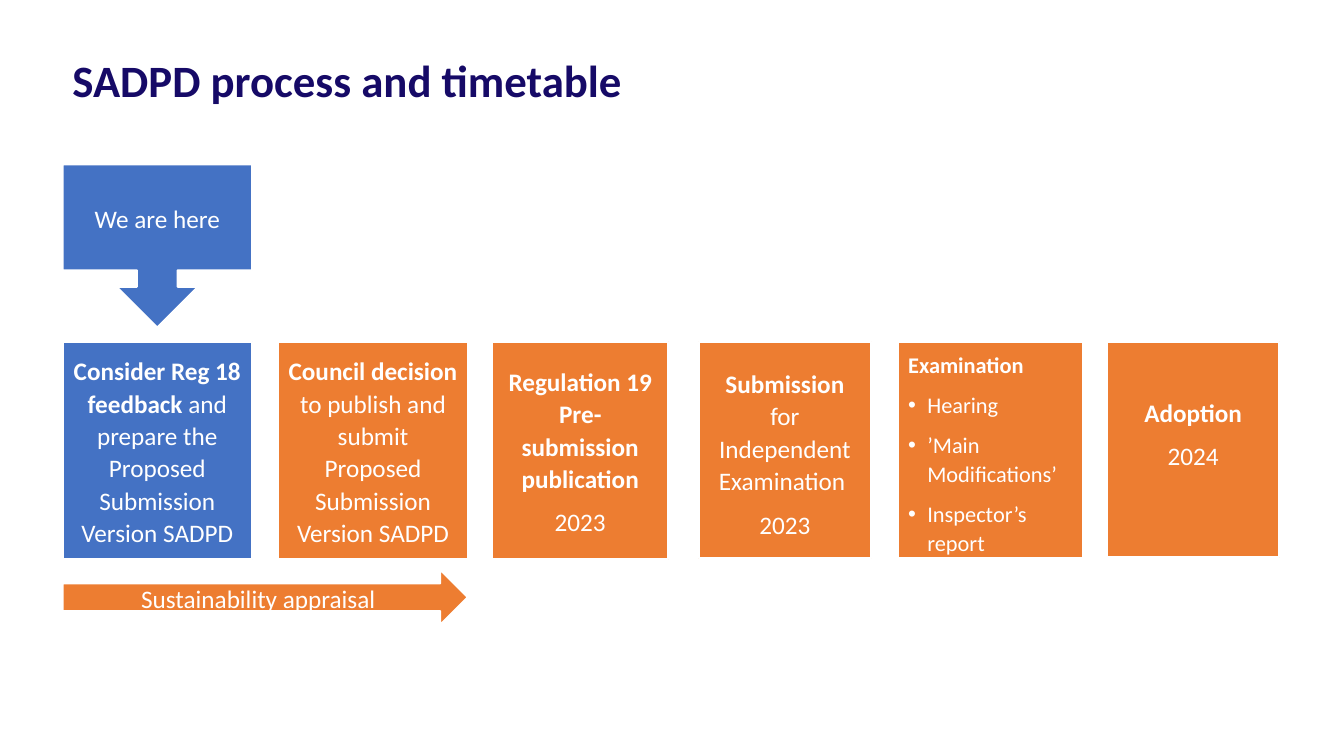
"""Build the SADPD process and timetable slide."""
from pptx import Presentation, util as u
from pptx.dml.color import RGBColor
from pptx.enum import shapes, text
from pptx.oxml import parse_xml
from pptx.oxml.ns import nsdecls

PX = 9144
BLUE = RGBColor(0x44, 0x72, 0xC4)
ORANGE = RGBColor(0xED, 0x7D, 0x31)
WHITE = RGBColor(0xFF, 0xFF, 0xFF)
NAVY = RGBColor(0x16, 0x0A, 0x67)
SHAPE = shapes.MSO_SHAPE
MID, LEFT = text.PP_ALIGN.CENTER, text.PP_ALIGN.LEFT

TITLE = "SADPD process and timetable"
TOP = 339
BULLET = 19

# fields: left, width, height, fill, (top, bottom) inset, size, align, paragraphs of (text, bold)
STEPS = [
    (62, 188, 216, BLUE, (5, 5), 18, MID, [
        [("Consider Reg 18 feedback ", True),
         ("and prepare the Proposed Submission Version SADPD", False)]]),
    (276, 188, 216, ORANGE, (5, 5), 18, MID, [
        [("Council decision ", True),
         ("to publish and submit Proposed Submission Version SADPD", False)]]),
    (488, 175, 216, ORANGE, (5, 5), 18, MID, [
        [("Regulation 19 Pre-submission publication", True)],
        [("2023", False)]]),
    (693, 171, 215, ORANGE, (10, 5), 18, MID, [
        [("Submission", True), (" for Independent Examination ", False)],
        [("2023", False)]]),
    (891, 183, 215, ORANGE, (7, 2), 16, LEFT, [
        [("Examination", True)],
        [("Hearing", False)],
        [("’Main Modifications’", False)],
        [("Inspector’s report", False)]]),
    (1098, 171, 214, ORANGE, (5, 38), 18, MID, [
        [("Adoption", True)],
        [("2024", False)]]),
]
MARKS = [
    (SHAPE.DOWN_ARROW_CALLOUT, (62, 163, 188, 162), BLUE, "We are here"),
    (SHAPE.RIGHT_ARROW, (62, 565, 402, 55), ORANGE, "Sustainability appraisal"),
]


def put(obj, vals):
    for key, val in vals.items():
        setattr(obj, key, val)


def scale(box):
    return [n * PX for n in box]


def write(par, runs, size, color):
    for words, bold in runs:
        run = par.add_run()
        run.text = words
        put(run.font, dict(name="Calibri", size=u.Pt(size), bold=bold))
        run.font.color.rgb = color


def bullet(par):
    props = par._p.get_or_add_pPr()
    props.set("marL", str(BULLET * PX))
    props.set("indent", str(-BULLET * PX))
    props.append(parse_xml(f'<a:buFont {nsdecls("a")} typeface="Arial"/>'))
    props.append(parse_xml(f'<a:buChar {nsdecls("a")} char="•"/>'))


def block(slide, kind, box, fill, inset, size, align, paras):
    shape = slide.shapes.add_shape(kind, *scale(box))
    shape.shadow.inherit = False
    shape.fill.solid()
    shape.fill.fore_color.rgb = fill
    shape.line.color.rgb = WHITE
    shape.line.width = u.Pt(1.5)
    frame = shape.text_frame
    put(frame, dict(word_wrap=True, vertical_anchor=text.MSO_ANCHOR.MIDDLE,
                    margin_top=inset[0] * PX, margin_bottom=inset[1] * PX))
    for i, runs in enumerate(paras):
        par = frame.add_paragraph() if i else frame.paragraphs[0]
        after = 8 if i < len(paras) - 1 else 0
        put(par, dict(alignment=align, line_spacing=1.07, space_after=u.Pt(after)))
        if align == LEFT and i:
            bullet(par)
        write(par, runs, size, WHITE)


def main():
    deck = Presentation()
    put(deck, dict(slide_width=1333 * PX, slide_height=750 * PX))
    slide = deck.slides.add_slide(deck.slide_layouts[6])
    head = slide.shapes.add_textbox(*scale((62, 47, 1036, 81))).text_frame
    head.word_wrap = True
    write(head.paragraphs[0], [(TITLE, True)], 32, NAVY)
    for kind, box, fill, words in MARKS:
        block(slide, kind, box, fill, (5, 5), 18, MID, [[(words, False)]])
    for left, width, height, *rest in STEPS:
        block(slide, SHAPE.RECTANGLE, (left, TOP, width, height), *rest)
    deck.save("out.pptx")


if __name__ == "__main__":
    main()
